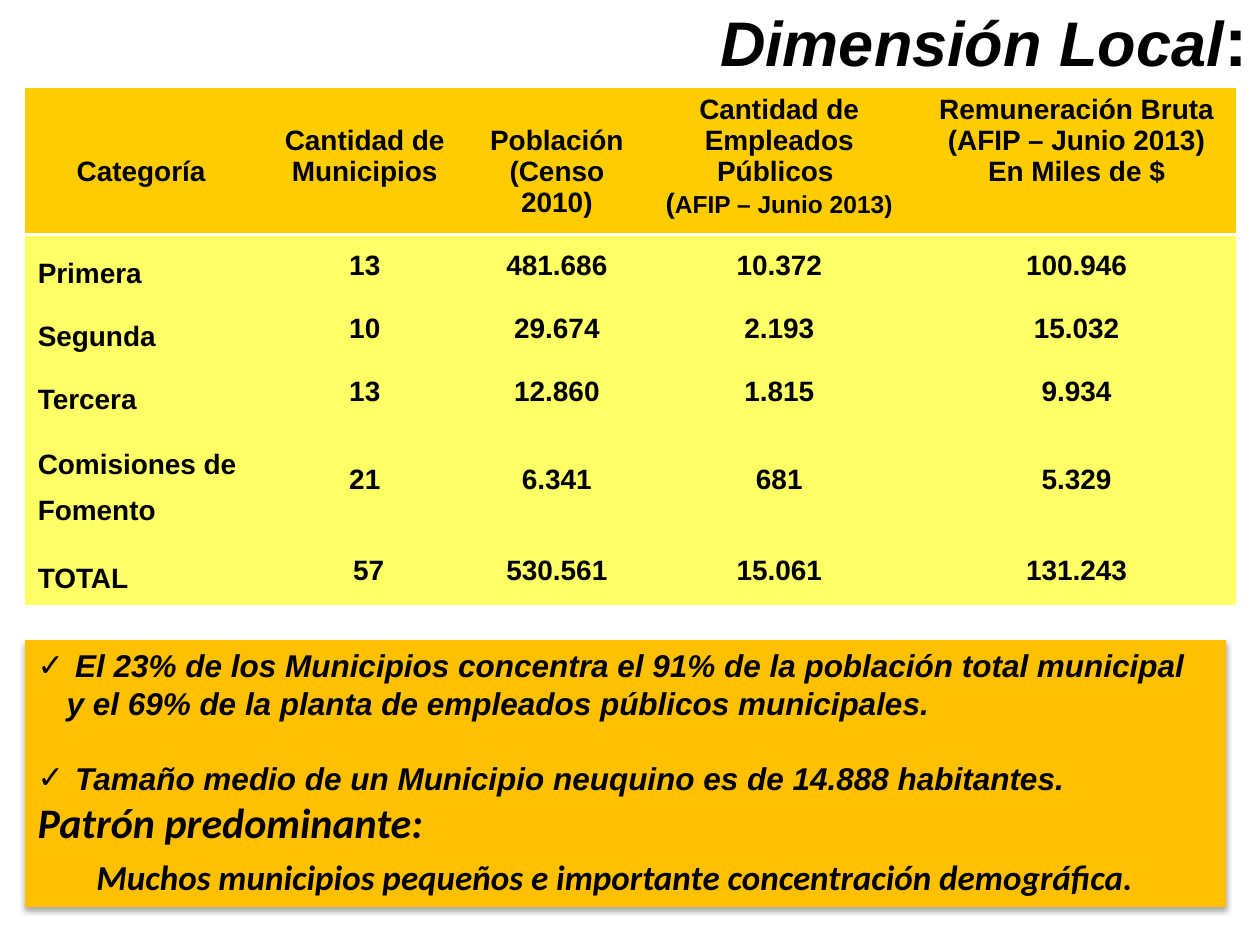
from lxml import etree
from pptx import Presentation
from pptx.dml.color import RGBColor
from pptx.enum.shapes import MSO_SHAPE as Shape
from pptx.enum.text import MSO_ANCHOR as Anchor, PP_ALIGN as Align
from pptx.oxml import parse_xml
from pptx.oxml.ns import nsdecls, qn
from pptx.util import Inches, Pt

PLAIN_STYLE = "{2D5ABB26-0587-4C30-8999-92F81FD0307C}"
LINE_HEIGHT = 0.245
COLUMNS = [1.84, 1.71, 1.34, 2.19, 2.53]
ROWS = [1.16, 0.5, 0.5, 0.5, 0.9, 0.54]
HEADERS = [
    (2, [["Categoría"]]),
    (1, [["Cantidad de Municipios"]]),
    (1, [["Población"], ["(Censo 2010)"]]),
    (0, [["Cantidad de Empleados Públicos "], ["(", ("AFIP – Junio 2013)", 14)]]),
    (0, [["Remuneración Bruta"], ["(AFIP – Junio 2013)"], ["En Miles de $"]]),
]
BODY = [
    ["Primera", "13", "481.686", "10.372", "100.946"],
    ["Segunda", "10", "29.674", "2.193", "15.032"],
    ["Tercera", "13", "12.860", "1.815", "9.934"],
    ["Comisiones de Fomento", "21", "6.341", "681", "5.329"],
    ["TOTAL", " 57", "530.561", "15.061", "131.243"],
]


def color(value):
    return RGBColor.from_string(value)


def write(para, text, size=16, font="Arial", italic=False, align=None,
          spacing=None, before=None):
    span = para.add_run()
    span.text = text
    span.font.size = Pt(size)
    span.font.name = font
    span.font.bold = True
    span.font.italic = italic
    span.font.color.rgb = color("000000")
    if align is not None:
        para.alignment = align
    if spacing is not None:
        para.line_spacing = spacing
    if before is not None:
        para.space_before = Pt(before)


def next_para(frame, index):
    return frame.paragraphs[0] if index == 0 else frame.add_paragraph()


class SlideBuilder:
    header_fill = "FFCC00"
    body_fill = "FFFF66"
    callout_fill = "FFC000"
    border = "FFFFFF"

    def __init__(self, page):
        self.page = page

    def title(self, left, top, width, height):
        box = self.page.shapes.title
        box.left, box.top = Inches(left), Inches(top)
        box.width, box.height = Inches(width), Inches(height)
        frame = box.text_frame
        frame.vertical_anchor = Anchor.MIDDLE
        para = frame.paragraphs[0]
        write(para, "Dimensión Local", size=36, italic=True, align=Align.RIGHT)
        write(para, ":", size=40)

    def fill_cell(self, cell, fill):
        cell.fill.solid()
        cell.fill.fore_color.rgb = color(fill)

    def header_cell(self, cell, skipped_lines, lines):
        self.fill_cell(cell, self.header_fill)
        cell.margin_top = Inches(0.05 + skipped_lines * LINE_HEIGHT)
        for index, parts in enumerate(lines):
            para = next_para(cell.text_frame, index)
            for part in parts:
                text, size = (part, 16) if isinstance(part, str) else part
                write(para, text, size=size, align=Align.CENTER)
        cell._tc.get_or_add_tcPr().insert(0, parse_xml(
            f'<a:lnB {nsdecls("a")} w="{Pt(2)}"><a:solidFill>'
            f'<a:srgbClr val="{self.border}"/></a:solidFill></a:lnB>'))

    def body_cell(self, cell, text, is_label):
        self.fill_cell(cell, self.body_fill)
        cell.vertical_anchor = Anchor.MIDDLE
        para = cell.text_frame.paragraphs[0]
        if is_label:
            write(para, text, spacing=1.5)
        else:
            write(para, text, align=Align.CENTER)

    def table(self, left, top):
        table = self.page.shapes.add_table(
            len(ROWS), len(COLUMNS), Inches(left), Inches(top),
            Inches(sum(COLUMNS)), Inches(sum(ROWS))).table
        table._tbl.tblPr.find(qn("a:tableStyleId")).text = PLAIN_STYLE
        table.horz_banding = False
        for column, width in zip(table.columns, COLUMNS):
            column.width = Inches(width)
        for row, height in zip(table.rows, ROWS):
            row.height = Inches(height)
        for index, (skipped_lines, lines) in enumerate(HEADERS):
            self.header_cell(table.cell(0, index), skipped_lines, lines)
        for row_index, values in enumerate(BODY, start=1):
            for index, text in enumerate(values):
                self.body_cell(table.cell(row_index, index), text, index == 0)

    def bullet(self, para):
        properties = para._p.get_or_add_pPr()
        indent = Inches(0.23)
        properties.set("marL", str(indent))
        properties.set("indent", str(-indent))
        etree.SubElement(properties, qn("a:buFont")).set("typeface", "Arial")
        etree.SubElement(properties, qn("a:buChar")).set("char", "✓")

    def soft_shadow(self, box):
        box.shadow.inherit = False
        effects = box._element.spPr.find(qn("a:effectLst"))
        effects.append(parse_xml(
            f'<a:outerShdw {nsdecls("a")} blurRad="{Pt(3.1)}" dist="{Pt(1.8)}" '
            'dir="5400000" rotWithShape="0"><a:srgbClr val="000000">'
            '<a:alpha val="35000"/></a:srgbClr></a:outerShdw>'))

    def callout(self, left, top, width, height):
        box = self.page.shapes.add_shape(
            Shape.RECTANGLE, Inches(left), Inches(top), Inches(width), Inches(height))
        box.fill.solid()
        box.fill.fore_color.rgb = color(self.callout_fill)
        box.line.fill.background()
        self.soft_shadow(box)
        frame = box.text_frame
        frame.word_wrap = True
        frame.vertical_anchor = Anchor.TOP
        frame.margin_right = Inches(0.27)
        paragraphs = [
            (" El 23% de los Municipios concentra el 91% de la población total "
             "municipal y el 69% de la planta de empleados públicos municipales.",
             True, dict(size=18)),
            (" Tamaño medio de un Municipio neuquino es de 14.888 habitantes.",
             True, dict(size=18, before=21)),
            ("Patrón predominante:", False, dict(size=24, font="Calibri")),
            ("Muchos municipios pequeños e importante concentración demográfica.",
             False, dict(size=20, font="Calibri", align=Align.CENTER, before=5)),
        ]
        for index, (text, has_bullet, style) in enumerate(paragraphs):
            para = next_para(frame, index)
            write(para, text, **{"italic": True, "align": Align.LEFT, **style})
            if has_bullet:
                self.bullet(para)


def main():
    deck = Presentation()
    deck.slide_width, deck.slide_height = Inches(10), Inches(7.5)
    builder = SlideBuilder(deck.slides.add_slide(deck.slide_layouts[5]))
    builder.title(0, 0, 10, 0.61)
    builder.callout(0.2, 5.08, 9.53, 2.12)
    builder.table(0.2, 0.7)
    deck.save("out.pptx")


if __name__ == "__main__":
    main()
